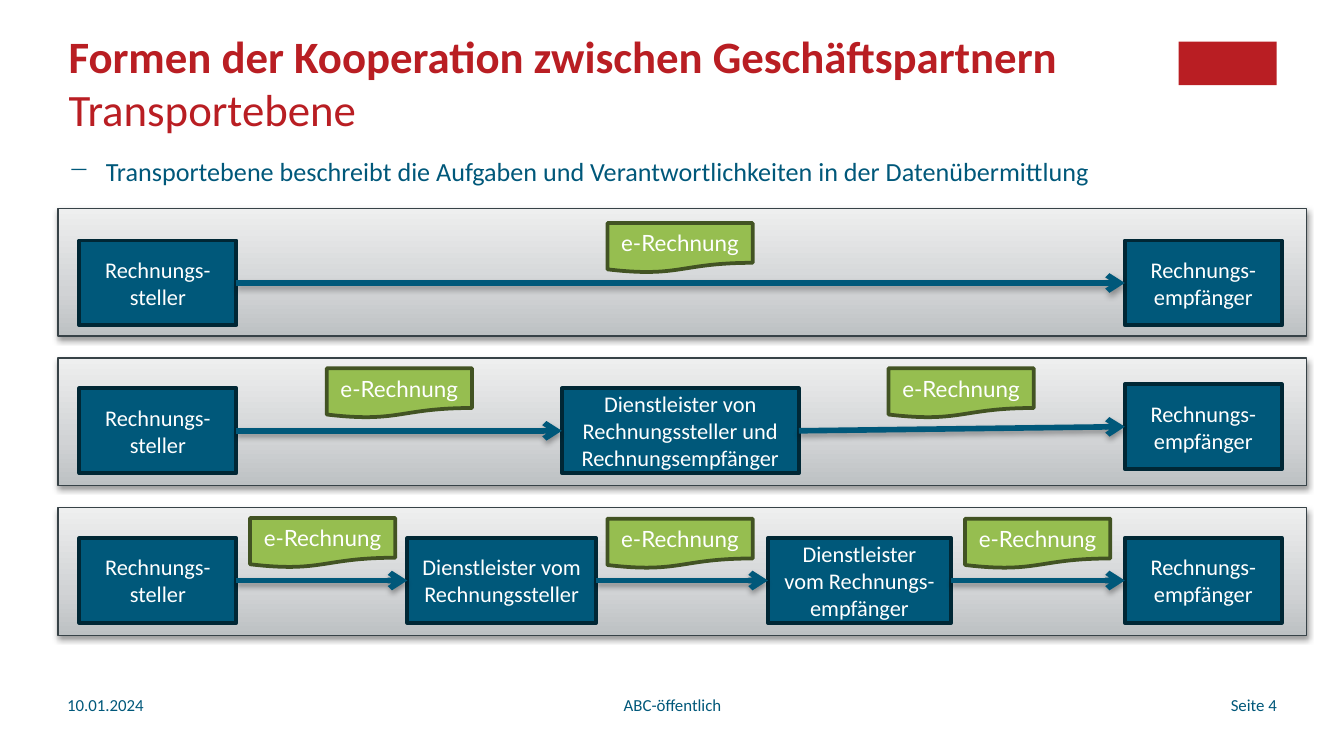
from pptx import Presentation
from pptx.dml.color import RGBColor
from pptx.enum.shapes import MSO_CONNECTOR, MSO_SHAPE
from pptx.enum.text import MSO_ANCHOR, MSO_AUTO_SIZE, PP_ALIGN
from pptx.oxml import parse_xml
from pptx.oxml.ns import nsdecls, qn
from pptx.util import Pt

COLORS = {
    "red": "B91E23", "blue": "00587A", "navy": "002735", "green": "96BE50",
    "olive": "425323", "gray": "374247", "white": "FFFFFF",
}
PANEL_STOPS = [(0, "BDC1C3"), (35, "D1D3D5"), (100, "EEEFEF")]


def rgb(name):
    return RGBColor.from_string(COLORS[name])


class Diagram:
    font = "Calibri"
    label_font = "Lato"

    def __init__(self, slide):
        self.s = slide

    def run(self, p, text, size, color, bold=False, font=None):
        r = p.add_run()
        r.text = text
        r.font.size = Pt(size)
        r.font.name = font or self.font
        r.font.bold = bold
        r.font.color.rgb = rgb(color)

    def frame(self, sp, insets, anchor=MSO_ANCHOR.TOP):
        tf = sp.text_frame
        tf.word_wrap = True
        tf.auto_size = MSO_AUTO_SIZE.NONE
        tf.vertical_anchor = anchor
        (tf.margin_left, tf.margin_top,
         tf.margin_right, tf.margin_bottom) = (Pt(v) for v in insets)
        return tf

    def title(self, bold_line, plain_line, x, y, w, h):
        sp = self.s.shapes.title
        sp.left, sp.top, sp.width, sp.height = Pt(x), Pt(y), Pt(w), Pt(h)
        p = self.frame(sp, (0, 0, 0, 0)).paragraphs[0]
        p.alignment = PP_ALIGN.LEFT
        self.run(p, bold_line, 24, "red", bold=True)
        p.add_line_break()
        self.run(p, plain_line, 24, "red")

    def text(self, text, x, y, w, h, size, align=PP_ALIGN.LEFT,
             insets=(0, 0, 0, 0), bullet=None):
        sp = self.s.shapes.add_textbox(Pt(x), Pt(y), Pt(w), Pt(h))
        p = self.frame(sp, insets).paragraphs[0]
        p.alignment = align
        if bullet:
            pPr = p._p.get_or_add_pPr()
            pPr.set("marL", str(Pt(20)))
            pPr.set("indent", str(-Pt(20)))
            pPr.append(parse_xml(f'<a:buChar {nsdecls("a")} char="{bullet}"/>'))
        self.run(p, text, size, "blue")

    def shape(self, kind, x, y, w, h, fill, line=None, weight=2):
        sp = self.s.shapes.add_shape(kind, Pt(x), Pt(y), Pt(w), Pt(h))
        sp.shadow.inherit = False
        if fill:
            sp.fill.solid()
            sp.fill.fore_color.rgb = rgb(fill)
        if line:
            sp.line.color.rgb = rgb(line)
            sp.line.width = Pt(weight)
        else:
            sp.line.fill.background()
        return sp

    def shadow(self, sp, alpha, dist):
        spPr = sp._element.spPr
        for old in spPr.findall(qn("a:effectLst")):
            spPr.remove(old)
        spPr.append(parse_xml(
            f'<a:effectLst {nsdecls("a")}><a:outerShdw blurRad="{Pt(3.1)}" '
            f'dist="{Pt(dist)}" dir="5400000" rotWithShape="0">'
            f'<a:srgbClr val="000000"><a:alpha val="{alpha * 1000}"/></a:srgbClr>'
            '</a:outerShdw></a:effectLst>'))

    def panel(self, x, y, w, h):
        sp = self.shape(MSO_SHAPE.RECTANGLE, x, y, w, h, None, "gray", 0.75)
        sp.fill.gradient()
        sp.fill.gradient_angle = 90
        stops = "".join(f'<a:gs pos="{pos * 1000}"><a:srgbClr val="{c}"/></a:gs>'
                        for pos, c in PANEL_STOPS)
        old = sp._element.spPr.find(qn("a:gradFill")).find(qn("a:gsLst"))
        old.getparent().replace(
            old, parse_xml(f'<a:gsLst {nsdecls("a")}>{stops}</a:gsLst>'))
        self.shadow(sp, 38, 1.6)

    def partner(self, text, x, y, w):
        sp = self.shape(MSO_SHAPE.RECTANGLE, x, y, w, 45.4, "blue", "navy")
        p = self.frame(sp, (7.2, 3.6, 7.2, 3.6), MSO_ANCHOR.MIDDLE).paragraphs[0]
        p.alignment = PP_ALIGN.CENTER
        self.run(p, text, 12, "white")
        return sp

    def invoice(self, x, y):
        sp = self.shape(MSO_SHAPE.FLOWCHART_DOCUMENT, x, y, 77.8, 26.6,
                        "green", "olive")
        p = self.frame(sp, (0, 3.6, 0, 3.6), MSO_ANCHOR.MIDDLE).paragraphs[0]
        p.alignment = PP_ALIGN.CENTER
        self.run(p, "e-Rechnung", 12, "white", font=self.label_font)

    def arrow(self, start, end):
        cn = self.s.shapes.add_connector(MSO_CONNECTOR.STRAIGHT, 0, 0, 0, 0)
        cn.begin_connect(start, 3)
        cn.end_connect(end, 1)
        cn.line.color.rgb = rgb("blue")
        cn.line.width = Pt(3)
        cn.line._get_or_add_ln().append(
            parse_xml(f'<a:tailEnd {nsdecls("a")} type="arrow"/>'))
        self.shadow(cn, 35, 1.8)


# Each row: partners (text, left, top, width) and invoices (left, top)
def sender(y):
    return ("Rechnungs-steller", 42.5, y, 84.2)


def receiver(y):
    return ("Rechnungs-empfänger", 602.6, y, 84.2)


ROWS = [
    ([sender(128.9), receiver(128.9)], [(325.4, 119.5)]),
    ([sender(208.1),
      ("Dienstleister von Rechnungssteller und Rechnungsempfänger", 301, 208.1, 127),
      receiver(205.9)],
     [(175, 197.3), (476, 197.3)]),
    ([sender(288.3),
      ("Dienstleister vom Rechnungssteller", 218.2, 288.3, 101.2),
      ("Dienstleister vom Rechnungs-empfänger", 411.4, 288.3, 98.2),
      receiver(288.3)],
     [(133.9, 277.5), (325.4, 277.9), (517, 277.9)]),
]


def main():
    prs = Presentation()
    prs.slide_width, prs.slide_height = Pt(720), Pt(405)
    d = Diagram(prs.slides.add_slide(prs.slide_layouts[5]))

    # Heading, with a plain block in the logo corner
    d.title("Formen der Kooperation zwischen Geschäftspartnern",
            "Transportebene", 36.7, 15.1, 595.4, 57)
    d.shape(MSO_SHAPE.RECTANGLE, 631.4, 22.3, 52.6, 23.4, "red")
    d.text("Transportebene beschreibt die Aufgaben und Verantwortlichkeiten "
           "in der Datenübermittlung", 36.7, 83.5, 646.6, 20, 14, bullet="−")

    # Transport variants
    for i, (partners, invoices) in enumerate(ROWS):
        d.panel(31, 111.6 + 80.2 * i, 669, 68.4)
        boxes = [d.partner(*partner) for partner in partners]
        for start, end in zip(boxes, boxes[1:]):
            d.arrow(start, end)
        for x, y in invoices:
            d.invoice(x, y)

    # Footer
    d.text("10.01.2024", 36, 368.6, 168, 28, 9, insets=(0, 3.6, 7.2, 3.6))
    d.text("ABC-öffentlich", 246.2, 368.6, 228.2, 28, 9, PP_ALIGN.CENTER,
           (7.2, 3.6, 7.2, 3.6))
    d.text("Seite 4", 516, 368.6, 168, 28, 9, PP_ALIGN.RIGHT, (7.2, 3.6, 0, 3.6))

    prs.save("out.pptx")


if __name__ == "__main__":
    main()
